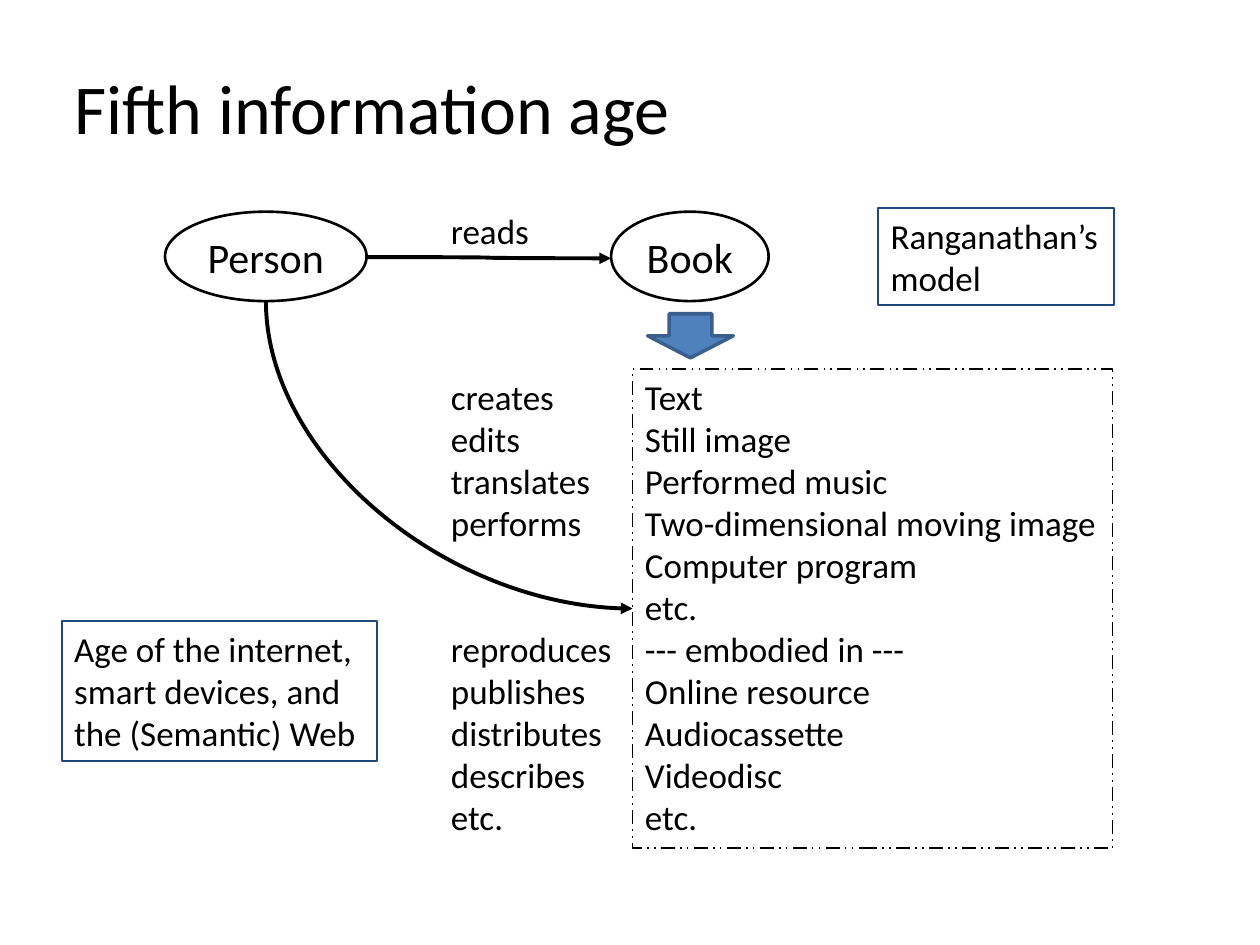
from lxml import etree
from pptx import Presentation
from pptx.dml.color import RGBColor
from pptx.enum.dml import MSO_LINE
from pptx.enum.shapes import MSO_CONNECTOR, MSO_SHAPE
from pptx.enum.text import MSO_ANCHOR, MSO_AUTO_SIZE, PP_ALIGN
from pptx.oxml.ns import qn
from pptx.util import Inches, Pt

LEFT, CENTER = PP_ALIGN.LEFT, PP_ALIGN.CENTER
TOP, MIDDLE = MSO_ANCHOR.TOP, MSO_ANCHOR.MIDDLE
GROW = MSO_AUTO_SIZE.SHAPE_TO_FIT_TEXT
OVAL, RECTANGLE, DOWN_ARROW = MSO_SHAPE.OVAL, MSO_SHAPE.RECTANGLE, MSO_SHAPE.DOWN_ARROW
CURVE = MSO_CONNECTOR.CURVE
DASHED = MSO_LINE.DASH_DOT_DOT

BLACK, NAVY, BLUE, STEEL = "000000", "1F497D", "4F81BD", "3A5F8C"
MARGIN, VERBS_LEFT, MEDIA_LEFT = 0.49, 3.48, 5.02
MEDIA_TOP, LOWER_TOP = 2.93, 4.93

MEDIA = [
    "Text", "Still image", "Performed music", "Two-dimensional moving image",
    "Computer program", "etc.", "--- embodied in ---", "Online resource",
    "Audiocassette", "Videodisc", "etc.",
]
CREATION_VERBS = ["creates", "edits", "translates", "performs"]
SUPPLY_VERBS = ["reproduces", "publishes", "distributes", "describes", "etc."]


def colour(value):
    return RGBColor.from_string(value)


def inches(box):
    return [Inches(length) for length in box]


def write(shape, lines, size=20, align=LEFT, anchor=TOP):
    frame = shape.text_frame
    frame.text = "\n".join(lines)
    frame.word_wrap = False
    frame.auto_size = GROW
    frame.vertical_anchor = anchor
    for para in frame.paragraphs:
        para.alignment = align
        para.font.name = "Calibri"
        para.font.size = Pt(size)
        para.font.color.rgb = colour(BLACK)


def add_title(page, box, text):
    title = page.shapes.title
    title.left, title.top, title.width, title.height = inches(box)
    write(title, [text], size=40)


def add_outline(page, kind, box, line, width):
    shape = page.shapes.add_shape(kind, *inches(box))
    shape.shadow.inherit = False
    shape.fill.background()
    shape.line.color.rgb = colour(line)
    shape.line.width = Pt(width)
    return shape


def add_entity(page, box, name):
    oval = add_outline(page, OVAL, box, BLACK, 1.5)
    write(oval, [name], size=24, align=CENTER, anchor=MIDDLE)


def add_note(page, box, lines):
    write(add_outline(page, RECTANGLE, box, NAVY, 1), lines)


def add_media(page, box):
    frame = add_outline(page, RECTANGLE, box, BLACK, 1)
    frame.line.dash_style = DASHED
    write(frame, MEDIA)


def add_verbs(page, box, verbs):
    write(page.shapes.add_textbox(*inches(box)), verbs)


def add_block_arrow(page, box):
    arrow = add_outline(page, DOWN_ARROW, box, STEEL, 2)
    arrow.fill.solid()
    arrow.fill.fore_color.rgb = colour(BLUE)


def add_curve(page, start, end):
    curve = page.shapes.add_connector(CURVE, *inches(start + end))
    curve.line.color.rgb = colour(BLACK)
    curve.line.width = Pt(2.25)
    etree.SubElement(curve.line._get_or_add_ln(), qn("a:tailEnd"), type="triangle")
    etree.SubElement(curve._element.spPr, qn("a:effectLst"))
    return curve


def add_downward_curve(page, start, end):
    curve = add_curve(page, start, end)
    across, down = end[0] - start[0], end[1] - start[1]
    middle_x, middle_y = (start[0] + end[0]) / 2, (start[1] + end[1]) / 2
    curve.left, curve.top = inches((middle_x - down / 2, middle_y - across / 2))
    curve.width, curve.height = inches((down, across))
    properties = curve._element.spPr
    properties.find(qn("a:prstGeom")).set("prst", "curvedConnector2")
    frame = properties.find(qn("a:xfrm"))
    frame.set("rot", str(270 * 60000))
    frame.set("flipH", "1")


def build():
    deck = Presentation()
    deck.slide_width, deck.slide_height = Inches(10), Inches(7.5)
    page = deck.slides.add_slide(deck.slide_layouts[5])

    add_title(page, (MARGIN, 0.46, 4.99, 0.77), "Fifth information age")
    add_entity(page, (1.31, 1.68, 1.6, 0.71), "Person")
    add_entity(page, (4.85, 1.68, 1.25, 0.71), "Book")
    add_curve(page, (2.91, 2.04), (4.85, 2.05))
    add_verbs(page, (VERBS_LEFT, 1.61, 0.83, 0.44), ["reads"])
    add_note(page, (6.97, 1.65, 1.87, 0.77), ["Ranganathan’s", "model"])
    add_media(page, (MEDIA_LEFT, MEDIA_TOP, 3.81, 3.8))
    add_block_arrow(page, (5.14, 2.49, 0.68, 0.35))
    add_downward_curve(page, (2.11, 2.39), (MEDIA_LEFT, 4.83))
    add_verbs(page, (VERBS_LEFT, LOWER_TOP, 1.49, 1.78), SUPPLY_VERBS)
    add_verbs(page, (VERBS_LEFT, MEDIA_TOP, 1.32, 1.45), CREATION_VERBS)
    add_note(page, (MARGIN, LOWER_TOP, 2.5, 1.11),
             ["Age of the internet,", "smart devices, and", "the (Semantic) Web"])
    deck.save("out.pptx")


if __name__ == "__main__":
    build()
